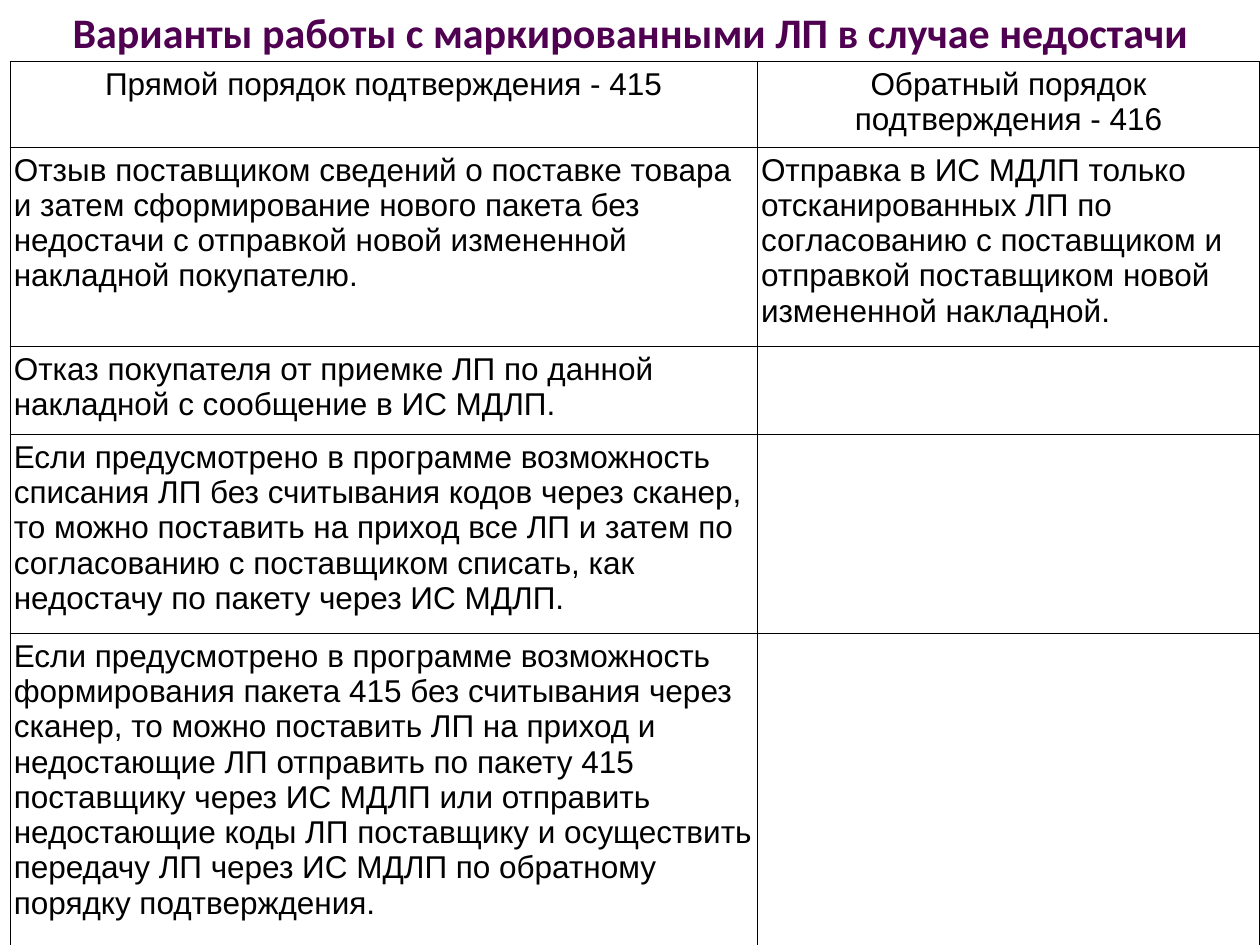
"""Build a slide comparing two ways of handling a shortage of marked medicines."""
from dataclasses import dataclass

from lxml import etree
from pptx import Presentation
from pptx.dml.color import RGBColor
from pptx.enum.text import MSO_ANCHOR, MSO_AUTO_SIZE, PP_ALIGN
from pptx.oxml.ns import qn
from pptx.util import Inches, Pt

CENTER, LEFT = PP_ALIGN.CENTER, PP_ALIGN.LEFT
TOP, MIDDLE = MSO_ANCHOR.TOP, MSO_ANCHOR.MIDDLE
GROW = MSO_AUTO_SIZE.SHAPE_TO_FIT_TEXT
TITLE_ONLY = 5


@dataclass(frozen=True)
class Theme:
    """Colours, fonts and type sizes of the slide."""
    heading: str = "500050"
    ink: str = "000000"
    heading_font: str = "Calibri"
    body_font: str = "Arial"
    heading_size: int = 24
    body_size: int = 18
    rule_width: float = 0.75


THEME = Theme()
SLIDE_WIDTH, SLIDE_HEIGHT = Inches(10), Inches(7.5)
COLUMN_WIDTHS = [5.93, 3.99]
ROW_HEIGHTS = [0.68, 1.58, 0.7, 1.58, 2.47]
HEADING = "Варианты работы с маркированными ЛП в случае недостачи"
OPTIONS = [
    ("Прямой порядок подтверждения - 415", "Обратный порядок подтверждения - 416"),
    ("Отзыв поставщиком сведений о поставке товара и затем сформирование нового "
     "пакета без недостачи с отправкой новой измененной накладной покупателю.",
     "Отправка в ИС МДЛП только отсканированных ЛП по согласованию с поставщиком "
     "и отправкой поставщиком новой измененной накладной."),
    ("Отказ покупателя от приемке ЛП по данной накладной с сообщение в ИС МДЛП.", ""),
    ("Если предусмотрено в программе возможность списания ЛП без считывания кодов "
     "через сканер, то можно поставить на приход все ЛП и затем по согласованию "
     "с поставщиком списать, как недостачу по пакету через ИС МДЛП.", ""),
    ("Если предусмотрено в программе возможность формирования пакета 415 без "
     "считывания через сканер, то можно поставить ЛП на приход и недостающие ЛП "
     "отправить по пакету 415 поставщику через ИС МДЛП или отправить недостающие "
     "коды ЛП поставщику и осуществить передачу ЛП через ИС МДЛП по обратному "
     "порядку подтверждения.", ""),
]


def write(frame, text, *, font=THEME.body_font, size=THEME.body_size,
          color=THEME.ink, bold=False, align=LEFT):
    """Put one formatted paragraph into a text frame."""
    paragraph = frame.paragraphs[0]
    paragraph.alignment = align
    run = paragraph.add_run()
    run.text = text
    run.font.name, run.font.size, run.font.bold = font, Pt(size), bold
    run.font.color.rgb = RGBColor.from_string(color)


def rule_cell(cell):
    """Draw a thin rule on all four sides of a cell."""
    properties = cell._tc.get_or_add_tcPr()
    for position, side in enumerate(("a:lnL", "a:lnR", "a:lnT", "a:lnB")):
        rule = etree.Element(qn(side), w=str(Pt(THEME.rule_width)))
        fill = etree.SubElement(rule, qn("a:solidFill"))
        etree.SubElement(fill, qn("a:srgbClr"), val=THEME.ink)
        properties.insert(position, rule)


def add_heading(slide):
    """Place the heading in the title placeholder."""
    title = slide.shapes.title
    title.left, title.top = Inches(0.16), 0
    title.width, title.height = Inches(9.69), Inches(0.5)
    frame = title.text_frame
    frame.word_wrap, frame.auto_size = True, GROW
    frame.vertical_anchor = MIDDLE
    write(frame, HEADING, font=THEME.heading_font, size=THEME.heading_size,
          color=THEME.heading, bold=True, align=CENTER)


def add_options(slide):
    """Add the ruled table of options with a centred first row."""
    table = slide.shapes.add_table(
        len(ROW_HEIGHTS), len(COLUMN_WIDTHS), Inches(0.08), Inches(0.49),
        Inches(sum(COLUMN_WIDTHS)), Inches(sum(ROW_HEIGHTS))).table
    table.first_row = table.horz_banding = False
    for column, width in zip(table.columns, COLUMN_WIDTHS):
        column.width = Inches(width)
    for row_index, (row, height) in enumerate(zip(table.rows, ROW_HEIGHTS)):
        row.height = Inches(height)
        for cell, text in zip(row.cells, OPTIONS[row_index]):
            cell.margin_left = cell.margin_right = Inches(0.03)
            cell.margin_top = cell.margin_bottom = Inches(0.04)
            cell.vertical_anchor = TOP
            cell.fill.background()
            rule_cell(cell)
            if text:
                write(cell.text_frame, text, align=LEFT if row_index else CENTER)


def main():
    """Build and save the slide."""
    presentation = Presentation()
    presentation.slide_width, presentation.slide_height = SLIDE_WIDTH, SLIDE_HEIGHT
    slide = presentation.slides.add_slide(presentation.slide_layouts[TITLE_ONLY])
    add_heading(slide)
    add_options(slide)
    presentation.save("out.pptx")


if __name__ == "__main__":
    main()
